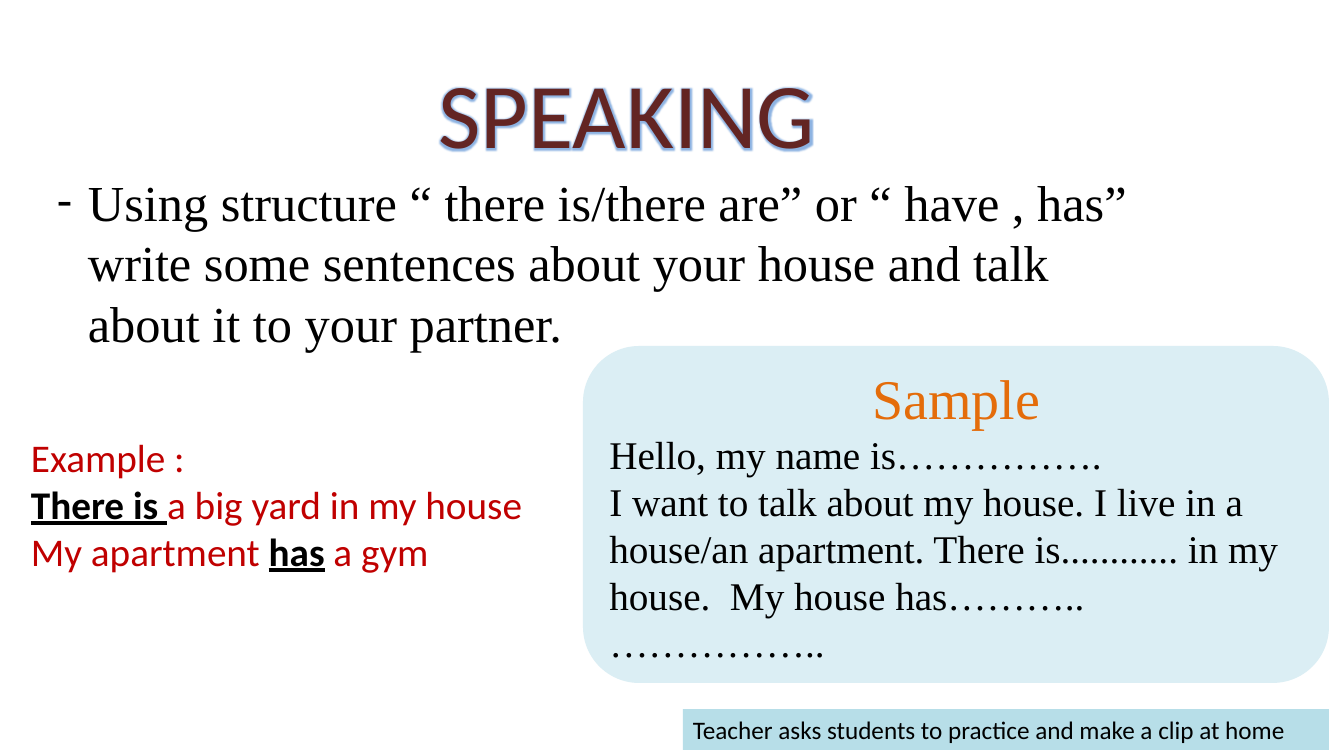
from lxml import etree
from pptx import Presentation
from pptx.dml.color import RGBColor
from pptx.enum.shapes import MSO_SHAPE
from pptx.enum.text import MSO_ANCHOR, PP_ALIGN
from pptx.oxml.ns import qn
from pptx.util import Pt

PX = 914400 / 100.8
BLACK = RGBColor(0, 0, 0)
MAROON = RGBColor(0x63, 0x25, 0x23)
RED = RGBColor(0xC0, 0, 0)
ORANGE = RGBColor(0xE4, 0x6C, 0x0A)
PALE_BLUE = RGBColor(0xDB, 0xEE, 0xF4)
LIGHT_BLUE = RGBColor(0xB7, 0xDE, 0xE8)
GLOW_BLUE = RGBColor(0x8E, 0xB4, 0xE3)
SANS, SERIF = "Calibri", "Times New Roman"

TITLE = ["SPEAKING"]
TASK = ["Using structure “ there is/there are” or “ have , has” write some sentences "
        "about your house and talk about it to your partner."]
EXAMPLE = ["Example :", "*There is *a big yard in my house", "My apartment *has* a gym"]
SAMPLE_HEADING = "Sample"
SAMPLE = [
    SAMPLE_HEADING,
    "Hello, my name is…………….",
    "I want to talk about my house. I live in a house/an apartment. "
    "There is............ in my house.  My house has………..",
    "……………..",
]
HOMEWORK = ["Teacher asks students to practice and make a clip at home"]

TITLE_BOX = (116, 55, 1022, 113)
TASK_BOX = (47, 166, 1127, 194)
EXAMPLE_BOX = (21, 428, 780, 152)
SAMPLE_CARD = (583, 346, 746, 337)
HOMEWORK_BAR = (683, 709, 646, 41)
HANGING_INDENT = 31


def emu(px):
    return round(px * PX)


def write(shape, lines, size, face, color):
    frame = shape.text_frame
    frame.word_wrap = True
    for number, line in enumerate(lines):
        paragraph = frame.paragraphs[0] if number == 0 else frame.add_paragraph()
        paragraph.alignment = PP_ALIGN.LEFT
        paragraph.font.size = Pt(size)
        paragraph.font.name = face
        paragraph.font.color.rgb = color
        for part, words in enumerate(line.split("*")):
            if words:
                run = paragraph.add_run()
                run.text = words
                if part % 2:
                    run.font.bold = run.font.underline = True
                    run.font.color.rgb = BLACK
    return frame


def add_text(slide, box, *style):
    return write(slide.shapes.add_textbox(*map(emu, box)), *style)


def add_panel(slide, kind, box, fill, *style):
    panel = slide.shapes.add_shape(kind, *map(emu, box))
    panel.shadow.inherit = False
    panel.fill.solid()
    panel.fill.fore_color.rgb = fill
    panel.line.fill.background()
    return write(panel, *style)


def add_dash(paragraph):
    properties = paragraph._p.get_or_add_pPr()
    properties.set("marL", str(emu(HANGING_INDENT)))
    properties.set("indent", str(-emu(HANGING_INDENT)))
    dash_font = etree.Element(qn("a:buFont"), typeface=SANS)
    dash = etree.Element(qn("a:buChar"), char="-")
    properties.insert(0, dash_font)
    properties.insert(1, dash)


def add_glow(run, color, radius):
    effects = etree.SubElement(run._r.get_or_add_rPr(), qn("a:effectLst"))
    glow = etree.SubElement(effects, qn("a:glow"), rad=str(Pt(radius)))
    etree.SubElement(glow, qn("a:srgbClr"), val=str(color))


def main():
    deck = Presentation()
    deck.slide_width, deck.slide_height = emu(1344), emu(756)
    slide = deck.slides.add_slide(deck.slide_layouts[6])

    title = add_text(slide, TITLE_BOX, TITLE, 66, SANS, MAROON)
    title.vertical_anchor = MSO_ANCHOR.MIDDLE
    title.paragraphs[0].alignment = PP_ALIGN.CENTER
    add_glow(title.paragraphs[0].runs[0], GLOW_BLUE, 4)

    task = add_text(slide, TASK_BOX, TASK, 36, SERIF, BLACK)
    add_dash(task.paragraphs[0])

    add_text(slide, EXAMPLE_BOX, EXAMPLE, 28, SANS, RED)

    sample = add_panel(slide, MSO_SHAPE.ROUNDED_RECTANGLE, SAMPLE_CARD, PALE_BLUE,
                       SAMPLE, 28, SERIF, BLACK)
    sample.vertical_anchor = MSO_ANCHOR.MIDDLE
    heading = sample.paragraphs[0]
    heading.alignment = PP_ALIGN.CENTER
    heading.font.size = Pt(40)
    heading.font.color.rgb = ORANGE

    homework = add_panel(slide, MSO_SHAPE.RECTANGLE, HOMEWORK_BAR, LIGHT_BLUE,
                         HOMEWORK, 18, SANS, BLACK)
    homework.vertical_anchor = MSO_ANCHOR.TOP

    deck.save("out.pptx")


if __name__ == "__main__":
    main()
